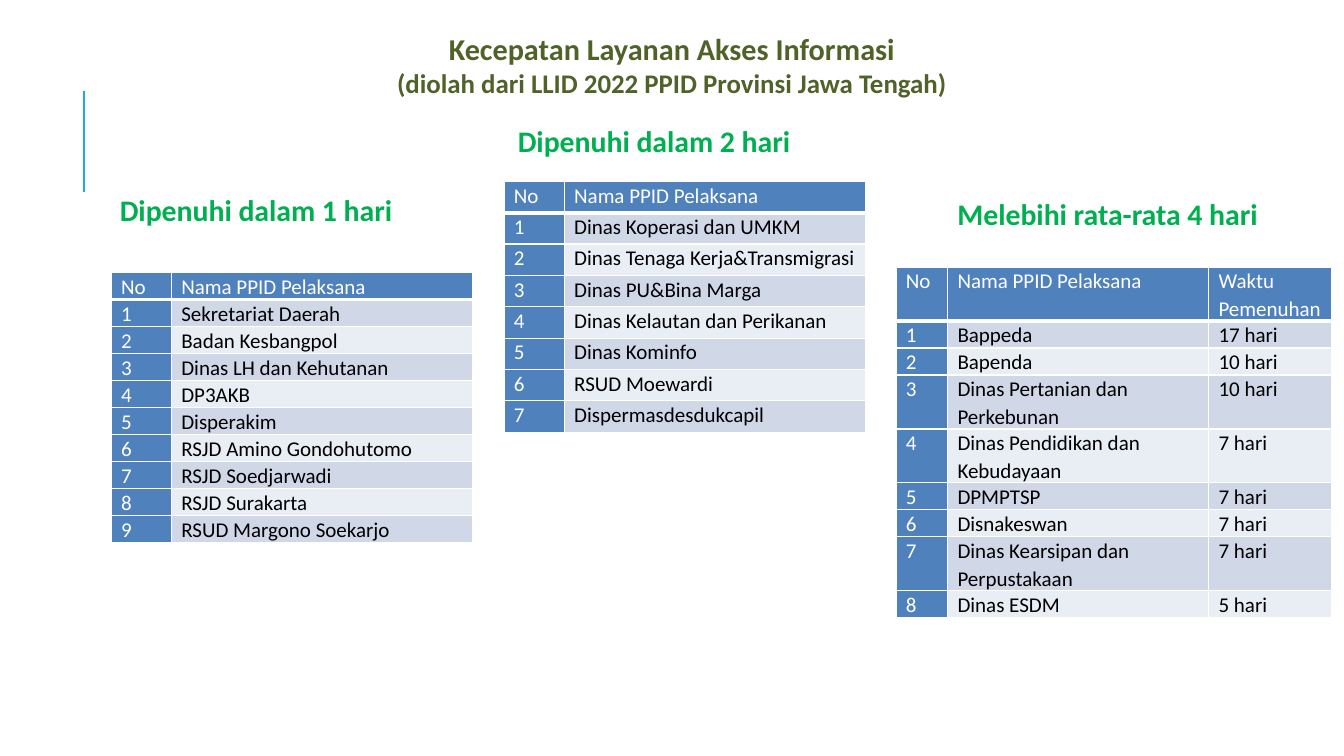
from lxml import etree
from pptx import Presentation
from pptx.dml.color import RGBColor
from pptx.enum import shapes, text
from pptx.oxml import ns
from pptx.util import Cm, Pt

WHITE = RGBColor(0xFF, 0xFF, 0xFF)
BLACK = RGBColor(0x00, 0x00, 0x00)
BLUE = RGBColor(0x4F, 0x81, 0xBD)
SKY = RGBColor(0x1C, 0xAC, 0xE3)
DARK = RGBColor(0xD0, 0xD8, 0xE8)
LIGHT = RGBColor(0xE9, 0xED, 0xF4)
GREEN = RGBColor(0x00, 0xB0, 0x50)
OLIVE = RGBColor(0x4F, 0x62, 0x28)

HEAD = ["No", "Nama PPID Pelaksana"]
FAST = ["Sekretariat Daerah", "Badan Kesbangpol", "Dinas LH dan Kehutanan",
        "DP3AKB", "Disperakim", "RSJD Amino Gondohutomo", "RSJD Soedjarwadi",
        "RSJD Surakarta", "RSUD Margono Soekarjo"]
MID = ["Dinas Koperasi dan UMKM", "Dinas Tenaga Kerja&Transmigrasi",
       "Dinas PU&Bina Marga", "Dinas Kelautan dan Perikanan",
       "Dinas Kominfo", "RSUD Moewardi", "Dispermasdesdukcapil"]
SLOW = [("Bappeda", "17 hari"), ("Bapenda", "10 hari"),
        ("Dinas Pertanian dan Perkebunan", "10 hari"),
        ("Dinas Pendidikan dan Kebudayaan", "7 hari"),
        ("DPMPTSP", "7 hari"), ("Disnakeswan", "7 hari"),
        ("Dinas Kearsipan dan Perpustakaan", "7 hari"),
        ("Dinas ESDM", "5 hari")]


def add_run(para, words, size, color, bold):
    """Append one formatted run to a paragraph."""
    run = para.add_run()
    run.text = words
    font = run.font
    font.name, font.size, font.bold = "Calibri", Pt(size), bold
    font.color.rgb = color


def add_box(slide, box, pad=(0, 0)):
    """Add a middle-anchored text box and return its centred paragraph."""
    frame = slide.shapes.add_textbox(*map(Cm, box)).text_frame
    frame.word_wrap = True
    frame.vertical_anchor = text.MSO_ANCHOR.MIDDLE
    frame.margin_left = frame.margin_right = Cm(pad[0])
    frame.margin_top = frame.margin_bottom = Cm(pad[1])
    para = frame.paragraphs[0]
    para.alignment = text.PP_ALIGN.CENTER
    return para


def add_title(slide):
    """Add the two-line slide title."""
    para = add_box(slide, (0, 1.12, 33.87, 1.02))
    add_run(para, "Kecepatan Layanan Akses Informasi", 21.6, OLIVE, True)
    para.add_line_break()
    add_run(para, "(diolah dari LLID 2022 PPID Provinsi Jawa Tengah)",
            19.2, OLIVE, True)


def add_label(slide, words, left, top):
    """Add the green heading of a table."""
    para = add_box(slide, (left, top, 10.67, 1.75), (0.33, 0.18))
    para.line_spacing = 0.9
    add_run(para, words, 21.3, GREEN, True)


def add_rule(slide):
    """Add the vertical accent line."""
    line = slide.shapes.add_connector(
        shapes.MSO_CONNECTOR.STRAIGHT, Cm(2.11), Cm(4.83), Cm(2.11), Cm(2.29))
    line.line.color.rgb = SKY
    line.line.width = Pt(1.5)
    etree.SubElement(line._element.spPr, ns.qn("a:effectLst"))


def edge(cell, base):
    """Draw white borders round a cell, with the given bottom width."""
    props = cell._tc.get_or_add_tcPr()
    for spot, side in enumerate("LRTB"):
        width = base if side == "B" else 1
        line = etree.Element(ns.qn(f"a:ln{side}"), w=str(Pt(width)))
        fill = etree.SubElement(line, ns.qn("a:solidFill"))
        etree.SubElement(fill, ns.qn("a:srgbClr"), val=str(WHITE))
        props.insert(spot, line)


def fill_cell(cell, words, row, col):
    """Write and style one table cell by its place in the grid."""
    main = row == 0 or col == 0
    cell.fill.solid()
    cell.fill.fore_color.rgb = BLUE if main else DARK if row % 2 else LIGHT
    cell.margin_left = cell.margin_right = Cm(0.25)
    cell.margin_top = cell.margin_bottom = 0
    para = cell.text_frame.paragraphs[0]
    para.line_spacing = 1.07
    para.space_after = Pt(8)
    add_run(para, words, 15, WHITE if main else BLACK, False)
    edge(cell, 1 if row else 3)


def add_grid(slide, left, top, cols, rows, data):
    """Add a table with the given column widths and row heights."""
    grid = slide.shapes.add_table(
        len(rows), len(cols), Cm(left), Cm(top),
        Cm(sum(cols)), Cm(sum(rows))).table
    for col, width in zip(grid.columns, cols):
        col.width = Cm(width)
    for row, (high, line) in enumerate(zip(rows, data)):
        grid.rows[row].height = Cm(high)
        for col, words in enumerate(line):
            fill_cell(grid.cell(row, col), words, row, col)


def count(head, items):
    """Return the header row followed by numbered rows."""
    return [head] + [[str(num), *item] for num, item in enumerate(items, 1)]


def main():
    """Build and save the slide."""
    deck = Presentation()
    deck.slide_width, deck.slide_height = Cm(33.87), Cm(19.05)
    slide = deck.slides.add_slide(deck.slide_layouts[6])
    add_rule(slide)
    add_title(slide)
    pair = (1.52, 7.6)
    fast = count(HEAD, [(name,) for name in FAST])
    add_grid(slide, 2.8, 6.87, pair, [0.65] * len(fast), fast)
    add_label(slide, "Dipenuhi dalam 1 hari", 1.12, 4.47)
    mid = count(HEAD, [(name,) for name in MID])
    add_grid(slide, 12.7, 4.57, pair, [0.79] * len(mid), mid)
    add_label(slide, "Dipenuhi dalam 2 hari", 11.15, 2.72)
    slow = count(HEAD + ["Waktu Pemenuhan"], SLOW)
    highs = [1.3 if row in (0, 3, 4, 7) else 0.65 for row in range(len(slow))]
    add_grid(slide, 22.58, 6.73, (1.3, 6.58, 3.1), highs, slow)
    add_label(slide, "Melebihi rata-rata 4 hari", 22.58, 4.57)
    deck.save("out.pptx")


if __name__ == "__main__":
    main()
